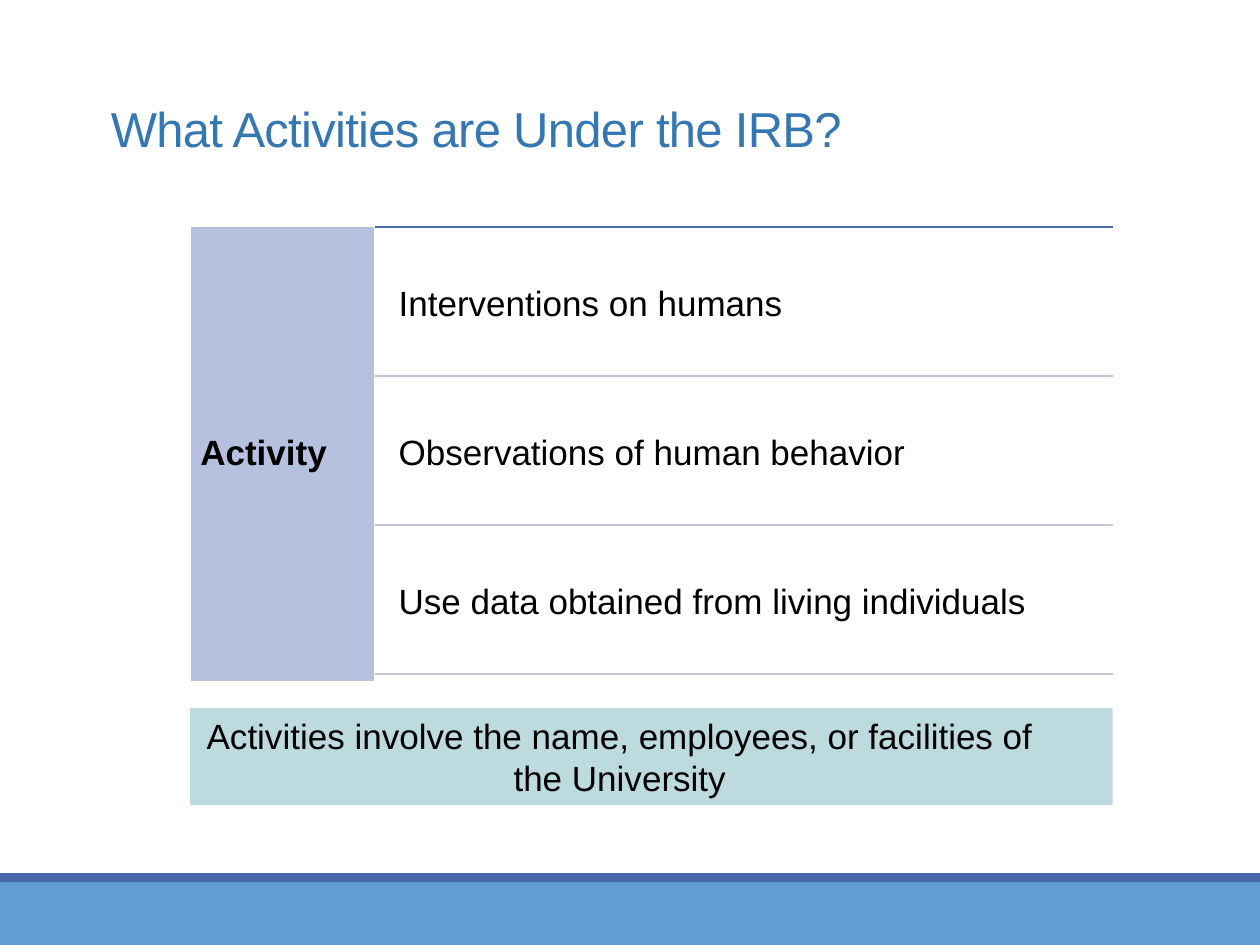
import lxml.etree
import pptx
import pptx.dml.color
import pptx.enum.shapes
import pptx.enum.text
import pptx.oxml.ns
import pptx.util

WIDTH, HEIGHT = 10, 7.5
INK = "000000"
ANCHOR = pptx.enum.text.MSO_ANCHOR
ALIGN = pptx.enum.text.PP_ALIGN


def inches(*lengths):
    return [pptx.util.Inches(length) for length in lengths]


def colour(value):
    return pptx.dml.color.RGBColor.from_string(value)


def apply(target, values):
    for name, value in values.items():
        setattr(target, name, value)


def write(shape, wording, size=20, ink=INK, bold=False, align=ALIGN.LEFT,
          spacing=0.9, insets=(0.08, 0.08, 0.08, 0.08)):
    frame = shape.text_frame
    left, top, right, bottom = inches(*insets)
    apply(frame, {
        "word_wrap": True,
        "auto_size": pptx.enum.text.MSO_AUTO_SIZE.NONE,
        "vertical_anchor": ANCHOR.MIDDLE,
        "margin_left": left, "margin_top": top,
        "margin_right": right, "margin_bottom": bottom,
    })
    paragraph = frame.paragraphs[0]
    apply(paragraph, {"alignment": align, "line_spacing": spacing})
    run = paragraph.add_run()
    run.text = wording
    apply(run.font, {"name": "Arial", "size": pptx.util.Pt(size), "bold": bold})
    run.font.color.rgb = colour(ink)


def add_block(slide, box, fill, outline=None):
    block = slide.shapes.add_shape(
        pptx.enum.shapes.MSO_SHAPE.RECTANGLE, *inches(*box))
    block.shadow.inherit = False
    block.fill.solid()
    block.fill.fore_color.rgb = colour(fill)
    if outline:
        block.line.color.rgb = colour(outline)
        block.line.width = pptx.util.Pt(0.75)
    else:
        block.line.fill.background()
    return block


def add_rule(slide, left, right, y, ink):
    rule = slide.shapes.add_connector(
        pptx.enum.shapes.MSO_CONNECTOR.STRAIGHT, *inches(left, y, right, y))
    rule.line.color.rgb = colour(ink)
    rule.line.width = pptx.util.Pt(1.25)
    properties = rule.element.find(pptx.oxml.ns.qn("p:spPr"))
    lxml.etree.SubElement(properties, pptx.oxml.ns.qn("a:effectLst"))


def add_footer_band(slide, box):
    left, top, width, height = box
    edge = height / 8
    add_block(slide, (left, top + edge, width, height - edge), "629DD1")
    add_block(slide, (left, top, width, edge), "4A66AC")


def add_title(slide, box, wording):
    title = slide.shapes.title
    apply(title, dict(zip(("left", "top", "width", "height"), inches(*box))))
    write(title, wording, size=28, ink="3477B2", spacing=0.85,
          insets=(0.1, 0.05, 0.1, 0.05))
    for properties in title.element.iter(pptx.oxml.ns.qn("a:rPr")):
        properties.set("spc", "-40")


def add_activity_list(slide, box, heading, activities):
    left, top, width, height = box
    right = left + width
    heading_width = width / 5
    divider = left + heading_width
    gap = 0.06
    pitch = (height - gap) / len(activities)
    indent = 0.11

    add_rule(slide, left, right, top, "4A66AC")
    heading_block = add_block(
        slide, (left, top, heading_width, height), "B5C1DF", "FFFFFF")
    write(heading_block, heading, bold=True)
    for row, activity in enumerate(activities):
        row_top = top + row * pitch
        entry = slide.shapes.add_textbox(*inches(
            divider + indent, row_top + gap,
            right - divider - indent, pitch - gap))
        write(entry, activity)
        add_rule(slide, divider, right, row_top + pitch, "C1C6DB")


def add_note(slide, box, wording):
    note = add_block(slide, box, "BDDADF")
    write(note, wording, align=ALIGN.CENTER, spacing=1.0,
          insets=(0.1, 0.05, 0.6, 0.05))


def main():
    deck = pptx.Presentation()
    deck.slide_width, deck.slide_height = inches(WIDTH, HEIGHT)
    slide = deck.slides.add_slide(deck.slide_layouts.get_by_name("Title Only"))
    content_left, content_width = 1.51, 7.32

    add_footer_band(slide, (0, 6.93, WIDTH, HEIGHT - 6.93))
    add_title(slide, (0.78, 0.42, 8.4, 1.26),
              "What Activities are Under the IRB?")
    add_activity_list(
        slide, (content_left, 1.8, content_width, 3.61), "Activity",
        ["Interventions on humans",
         "Observations of human behavior",
         "Use data obtained from living individuals"])
    add_note(slide, (content_left, 5.62, content_width, 0.77),
             "Activities involve the name, employees, or facilities "
             "of the University")
    deck.save("out.pptx")


if __name__ == "__main__":
    main()
